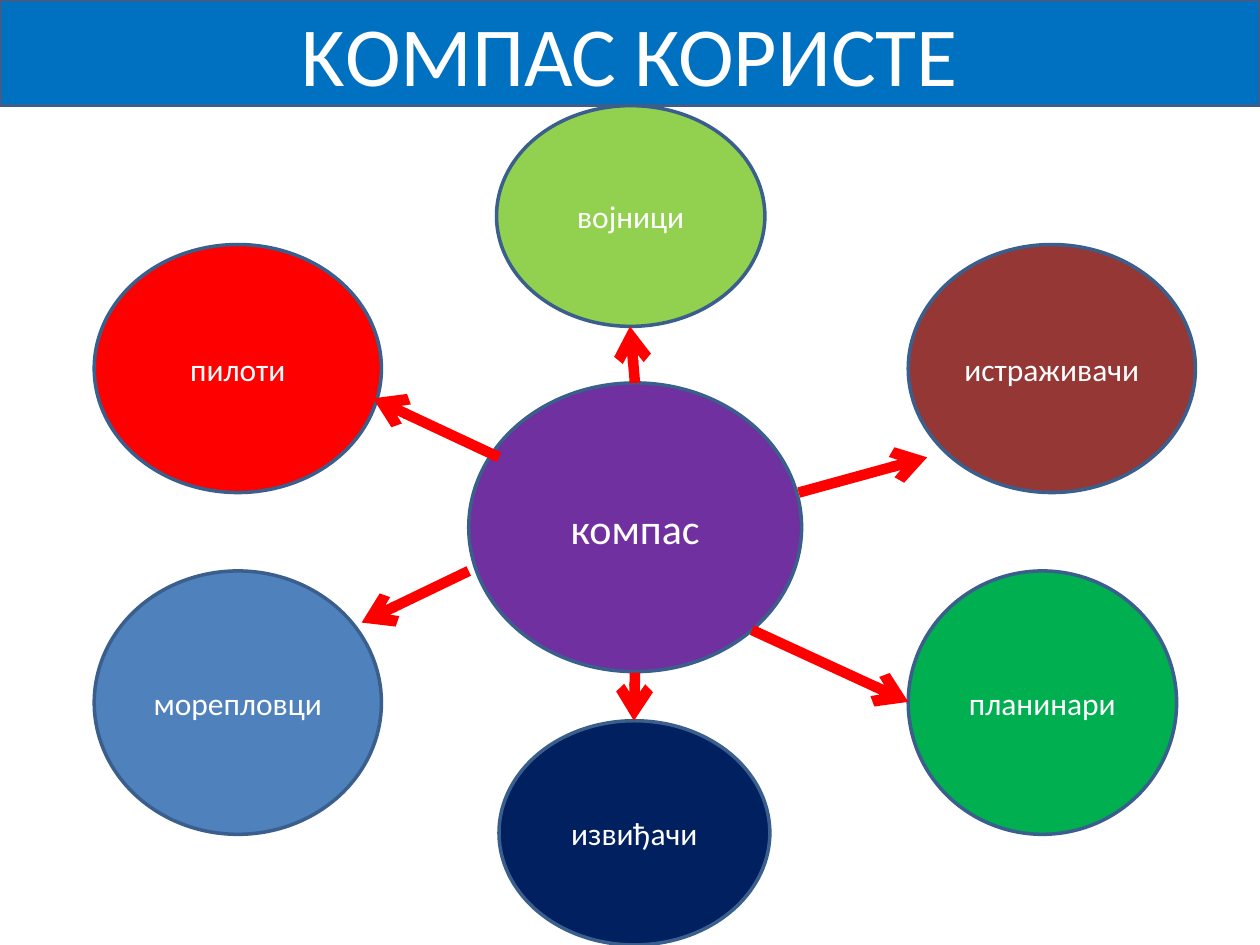
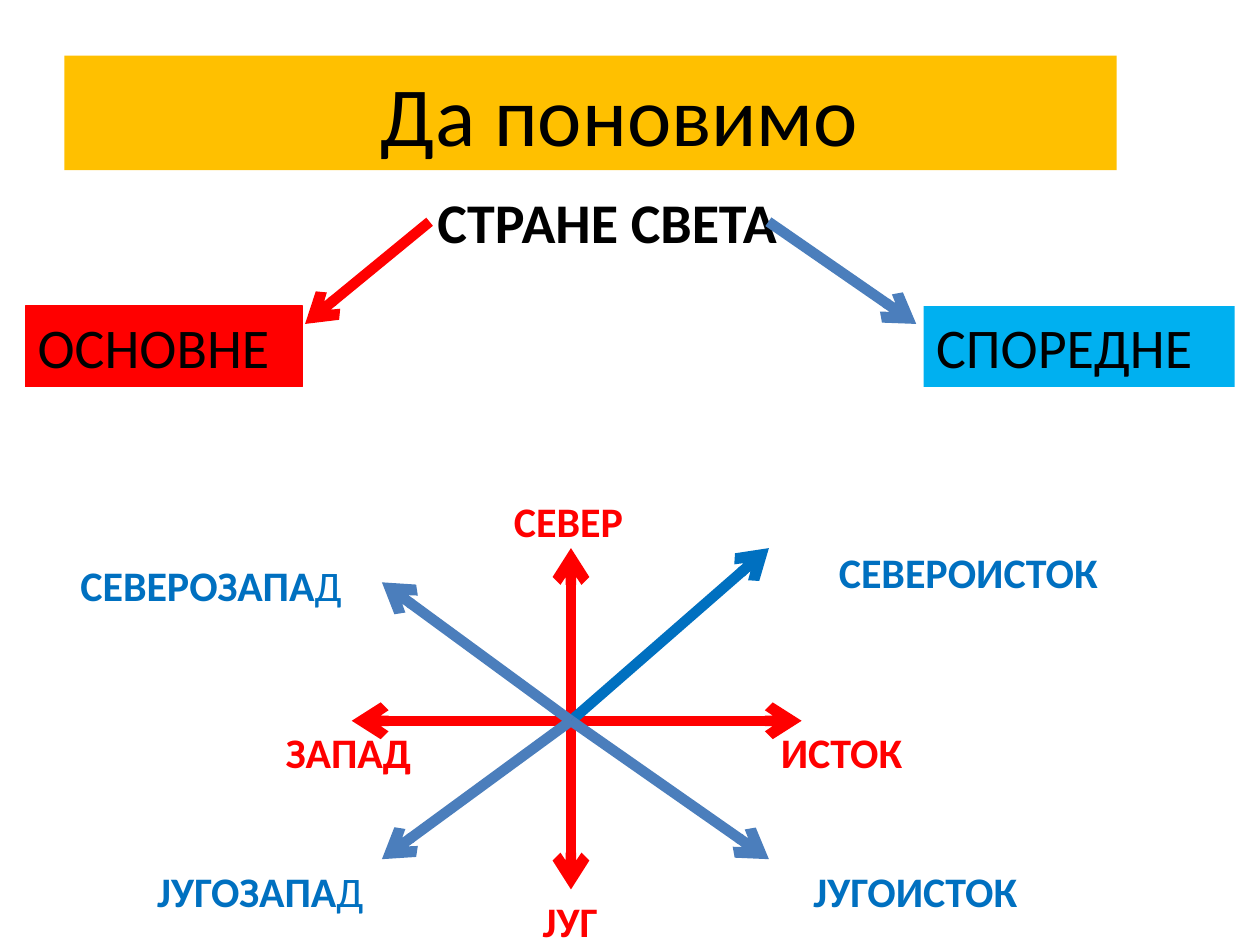
import pptx
import pptx.util
import pptx.dml.color
import pptx.enum.shapes
import pptx.enum.text
import pptx.oxml.ns
from lxml import etree

Cm, Pt = pptx.util.Cm, pptx.util.Pt
SHAPE = pptx.enum.shapes.MSO_SHAPE
ALIGN = pptx.enum.text.PP_ALIGN
ANCHOR = pptx.enum.text.MSO_ANCHOR

FONT = "Calibri"
BLACK, WHITE, RED = "000000", "FFFFFF", "FF0000"
BLUE, STEEL, OUTLINE = "0070C0", "4B7EBC", "3A5F8C"


# Shared helpers
def rgb(value):
    return pptx.dml.color.RGBColor.from_string(value)


def paint(sp, fill, line=None, width=2):
    sp.fill.solid()
    sp.fill.fore_color.rgb = rgb(fill)
    if line:
        sp.line.color.rgb = rgb(line)
        sp.line.width = Pt(width)
    else:
        sp.line.fill.background()


def write(sp, text, size, color, align=ALIGN.LEFT, anchor=ANCHOR.TOP, bold=False):
    tf = sp.text_frame
    tf.word_wrap = True
    tf.auto_size = pptx.enum.text.MSO_AUTO_SIZE.NONE
    tf.vertical_anchor = anchor
    tf.text = text
    p = tf.paragraphs[0]
    p.alignment = align
    for r in p.runs:
        style(r, size, color, bold)
    return p


def style(r, size, color, bold=False):
    r.font.name = FONT
    r.font.size = Pt(size)
    r.font.bold = bold
    r.font.color.rgb = rgb(color)


def add_shape(s, kind, x, y, w, h, fill, line=None, width=2):
    sp = s.shapes.add_shape(kind, Cm(x), Cm(y), Cm(w), Cm(h))
    sp.shadow.inherit = False
    paint(sp, fill, line, width)
    return sp


def add_text(s, x, y, w, h, text, size, color):
    sp = s.shapes.add_textbox(Cm(x), Cm(y), Cm(w), Cm(h))
    sp.text_frame.margin_right = 0
    return sp, write(sp, text, size, color, bold=True)


def add_arrow(s, x1, y1, x2, y2, color):
    line = s.shapes.add_connector(pptx.enum.shapes.MSO_CONNECTOR.STRAIGHT,
                                  Cm(x1), Cm(y1), Cm(x2), Cm(y2))
    line.line.color.rgb = rgb(color)
    line.line.width = Pt(6)
    qn = pptx.oxml.ns.qn
    etree.SubElement(line.line._get_or_add_ln(), qn("a:tailEnd"), type="arrow")
    etree.SubElement(line._element.spPr, qn("a:effectLst"))


def title_slide(prs, box, text, color, fill, line=None, align=ALIGN.CENTER):
    s = prs.slides.add_slide(prs.slide_layouts[5])
    title = s.shapes.title
    title.left, title.top, title.width, title.height = map(Cm, box)
    paint(title, fill, line)
    write(title, text, 48, color, align, ANCHOR.MIDDLE)
    return s


# Slide 1: the compass and its users
def users_diagram(s, x, y):
    users = [
        ("војници", 10.01, 0, 5.41, 4.45, "92D050"),
        ("истраживачи", 18.31, 2.8, 5.79, 5, "953735"),
        ("планинари", 18.31, 9.38, 5.41, 5.31, "00B050"),
        ("извиђачи", 10.06, 12.4, 5.46, 4.52, "002060"),
        ("морепловци", 1.9, 9.38, 5.79, 5.31, "4F81BD"),
        ("пилоти", 1.9, 2.8, 5.79, 5, RED),
    ]
    arrows = [
        (12.8, 5.59, 12.7, 4.45), (16.1, 7.8, 18.69, 7.09),
        (15.16, 10.57, 18.31, 12.02), (12.8, 11.43, 12.78, 12.4),
        (9.45, 9.38, 7.29, 10.42), (10.06, 7.09, 7.52, 5.9),
    ]
    compass = ("компас", 9.45, 5.59, 6.71, 5.82, "7030A0")
    for name, dx, dy, w, h, fill in [compass] + users:
        sp = add_shape(s, SHAPE.OVAL, x + dx, y + dy, w, h, fill, OUTLINE)
        size = 24 if name == compass[0] else 18
        write(sp, name, size, WHITE, ALIGN.CENTER, ANCHOR.MIDDLE)
    for x1, y1, x2, y2 in arrows:
        add_arrow(s, x + x1, y + y1, x + x2, y + y2, RED)


# Slide 2: the two groups of directions
def direction_groups(s, x, y):
    sp, _ = add_text(s, x + 6.25, y, 11.28, 1.63, "СТРАНЕ СВЕТА", 32, BLACK)
    sp.text_frame.margin_left = Cm(2.06)
    groups = [
        ("ОСНОВНЕ", 0, 5.59, RED, RED, (8.15, 5.64), RED),
        ("СПОРЕДНЕ", 18.11, 6.27, "00B0F0", None, (14.98, 17.96), STEEL),
    ]
    for name, dx, w, fill, line, (start, end), color in groups:
        add_arrow(s, x + start, y + 0.81, x + end, y + 2.87, color)
        sp = add_shape(s, SHAPE.RECTANGLE, x + dx, y + 2.51, w, 1.63, fill, line, 0.75)
        write(sp, name, 32, BLACK)


# Slide 2: compass rose around its centre
def compass_rose(s, cx, cy):
    arrows = [
        (0, -3.48, RED), (4.65, 0, RED), (0, 3.4, RED), (-4.42, 0, RED),
        (3.99, -3.48, BLUE), (-3.81, 2.79, STEEL),
        (3.99, 2.79, STEEL), (-3.81, -2.79, STEEL),
    ]
    # Text, regular last letter, offset from the centre, width, colour
    labels = [
        ("СЕВЕР", "", -1.4, -4.67, 4.29, RED),
        ("ЈУГ", "", -0.82, 3.4, 1.7, RED),
        ("ИСТОК", "", 3.98, 0, 3, RED),
        ("ЗАПАД", "", -6, 0, 3.18, RED),
        ("СЕВЕРОИСТОК", "", 5.15, -3.63, 5.77, BLUE),
        ("ЈУГОИСТОК", "", 4.64, 2.79, 4.65, BLUE),
        ("СЕВЕРОЗАПА", "Д", -10.14, -3.38, 6.35, BLUE),
        ("ЈУГОЗАПА", "Д", -8.59, 2.79, 4.72, BLUE),
    ]
    for dx, dy, color in arrows:
        add_arrow(s, cx, cy, cx + dx, cy + dy, color)
    for text, last, dx, dy, w, color in labels:
        _, p = add_text(s, cx + dx, cy + dy, w, 1.27, text, 24, color)
        if last:
            r = p.add_run()
            r.text = last
            style(r, 24, color)


def main():
    prs = pptx.Presentation()
    prs.slide_width, prs.slide_height = Cm(25.4), Cm(19.05)

    s = title_slide(prs, (0, 0, 25.4, 2.13), "KОМПАС КОРИСТЕ", WHITE, BLUE, OUTLINE)
    users_diagram(s, 0, 2.13)

    s = title_slide(prs, (1.3, 1.12, 21.21, 2.31), "Да поновимо", BLACK, "FFC000",
                    align=ALIGN.LEFT)
    s.shapes.title.text_frame.margin_left = Cm(6.38)
    direction_groups(s, 0.51, 3.66)
    compass_rose(s, 11.51, 14.53)

    prs.save("out.pptx")


if __name__ == "__main__":
    main()
